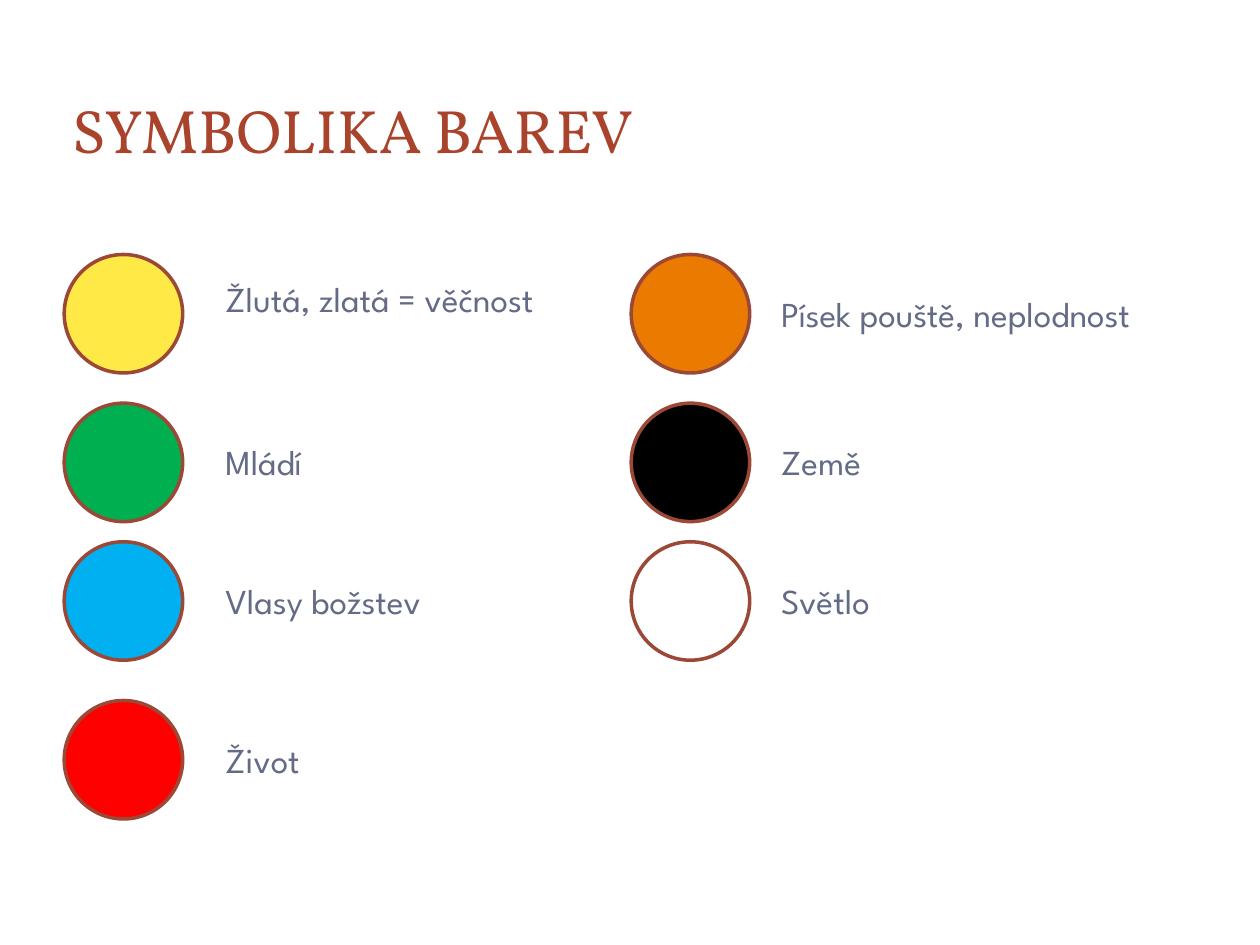
from pptx import Presentation
from pptx.dml.color import RGBColor
from pptx.enum.shapes import MSO_SHAPE
from pptx.enum.text import MSO_ANCHOR, MSO_AUTO_SIZE, PP_ALIGN
from pptx.util import Inches, Pt

OVAL = MSO_SHAPE.OVAL
MIDDLE, TOP = MSO_ANCHOR.MIDDLE, MSO_ANCHOR.TOP
LEFT = PP_ALIGN.LEFT
GROW, FIXED = MSO_AUTO_SIZE.SHAPE_TO_FIT_TEXT, MSO_AUTO_SIZE.NONE

RUST = RGBColor(0xA9, 0x43, 0x2B)
RIM = RGBColor(0x9B, 0x49, 0x36)
SLATE = RGBColor(0x64, 0x6B, 0x86)
YELLOW = RGBColor(0xFF, 0xE9, 0x47)
GREEN = RGBColor(0x00, 0xB0, 0x50)
BLUE = RGBColor(0x00, 0xB0, 0xF0)
RED = RGBColor(0xFF, 0x00, 0x00)
ORANGE = RGBColor(0xEA, 0x7B, 0x00)
BLACK = RGBColor(0x00, 0x00, 0x00)
WHITE = RGBColor(0xFF, 0xFF, 0xFF)

# Grid in inches: row tops, and for each column the circle, label and label width
ROWS = [2.02, 3.2, 4.3, 5.56]
COLS = [(0.51, 1.69, 3.07), (5.01, 6.1, 3.59)]
SIZE = 0.94
DROP = 0.25  # from circle top to label top

# Column, row, colour, meaning, label drop
COLOURS = [
    (0, 0, YELLOW, "Žlutá, zlatá = věčnost", 0.13),
    (0, 1, GREEN, "Mládí", DROP),
    (0, 2, BLUE, "Vlasy božstev", DROP),
    (0, 3, RED, "Život", DROP),
    (1, 0, ORANGE, "Písek pouště, neplodnost", DROP),
    (1, 1, BLACK, "Země", DROP),
    (1, 2, WHITE, "Světlo", DROP),
]


def set_text(frame, text, font, size, colour, anchor, fit):
    frame.text = text
    frame.word_wrap = True
    frame.auto_size = fit
    frame.vertical_anchor = anchor
    par = frame.paragraphs[0]
    par.alignment = LEFT
    par.font.name = font
    par.font.size = Pt(size)
    par.font.color.rgb = colour


def add_title(slide, text):
    title = slide.shapes.title
    title.left, title.top = Inches(0.47), Inches(0.45)
    title.width, title.height = Inches(9.03), Inches(1.14)
    set_text(title.text_frame, text, "Vollkorn", 35, RUST, MIDDLE, FIXED)


def add_circle(slide, left, top, colour):
    dot = slide.shapes.add_shape(
        OVAL, Inches(left), Inches(top), Inches(SIZE), Inches(SIZE))
    dot.shadow.inherit = False
    dot.fill.solid()
    dot.fill.fore_color.rgb = colour
    dot.line.color.rgb = RIM
    dot.line.width = Pt(2)


def add_label(slide, left, top, width, text):
    box = slide.shapes.add_textbox(
        Inches(left), Inches(top), Inches(width), Inches(0.44))
    set_text(box.text_frame, text, "League Spartan", 20, SLATE, TOP, GROW)


def main():
    prs = Presentation()
    prs.slide_width, prs.slide_height = Inches(10), Inches(7.5)
    slide = prs.slides.add_slide(prs.slide_layouts[5])
    add_title(slide, "SYMBOLIKA BAREV")

    # Each colour with its meaning
    for col, row, colour, text, drop in COLOURS:
        left, label, width = COLS[col]
        add_circle(slide, left, ROWS[row], colour)
        add_label(slide, label, ROWS[row] + drop, width, text)

    prs.save("out.pptx")


if __name__ == "__main__":
    main()
